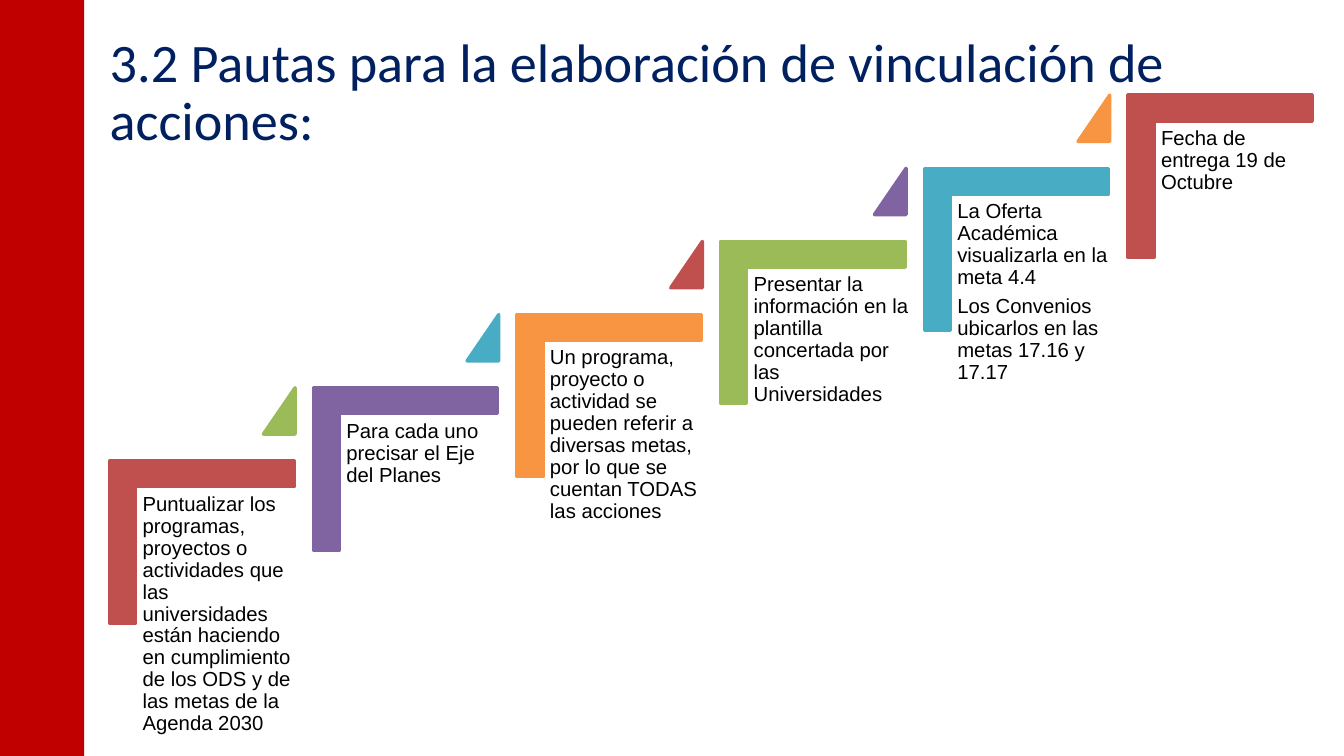
"""Build a slide with six ascending steps for linking actions."""
from dataclasses import dataclass

from pptx import Presentation
from pptx.dml.color import RGBColor
from pptx.enum.shapes import MSO_SHAPE as Shape
from pptx.enum.text import MSO_ANCHOR as Anchor
from pptx.util import Inches, Pt

TITLE = "3.2 Pautas para la elaboración de vinculación de acciones:"
STEPS = [
    ["Puntualizar los programas, proyectos o actividades que las universidades están "
     "haciendo en cumplimiento de los ODS y de las metas de la Agenda 2030"],
    ["Para cada uno precisar el Eje del Planes"],
    ["Un programa, proyecto o actividad se pueden referir a diversas metas, "
     "por lo que se cuentan TODAS las acciones"],
    ["Presentar la información en la plantilla concertada por las Universidades"],
    ["La Oferta Académica visualizarla en la meta 4.4",
     "Los Convenios ubicarlos en las metas 17.16 y 17.17"],
    ["Fecha de entrega 19 de Octubre"],
]


@dataclass(frozen=True)
class Theme:
    title_font: str = "Calibri"
    body_font: str = "Arial"
    title_size: float = 32
    body_size: float = 12
    title_color: str = "002060"
    body_color: str = "000000"
    bar: str = "C00000"
    cycle: tuple = ("BF504D", "9BBB59", "8064A2", "49ACC5", "F79543")


THEME = Theme()
WIDTH, HEIGHT = 11.02, 6.2
BAR_WIDTH = 0.69
FIRST_LEFT, FIRST_TOP = 0.99, 3.69
RUN, RISE = 1.67, 0.6
CORNER_SIZE = (1.33, 1.51)
CORNER_ARM = 0.16
TEXT_OFFSET, TEXT_SIZE, TEXT_INSET = (0.13, 0.31), (1.37, 1.75), 0.05
TRIANGLE_OFFSET, TRIANGLE_SIZE = (1.17, -0.51), (0.26, 0.38)


def add_block(slide, kind, position, size, color, adjustments=(), line_width=0):
    shape = slide.shapes.add_shape(kind, *map(Inches, (*position, *size)))
    shape.shadow.inherit = False
    shape.fill.solid()
    shape.fill.fore_color.rgb = RGBColor.from_string(color)
    if line_width:
        shape.line.color.rgb = RGBColor.from_string(color)
        shape.line.width = Pt(line_width)
    else:
        shape.line.fill.background()
    for index, value in enumerate(adjustments):
        shape.adjustments[index] = value
    return shape


def add_text(slide, position, size, paragraphs, font, points, color, inset=0, anchor=Anchor.TOP):
    frame = slide.shapes.add_textbox(*map(Inches, (*position, *size))).text_frame
    frame.word_wrap = True
    frame.vertical_anchor = anchor
    frame.margin_left = frame.margin_right = Inches(inset)
    frame.margin_top = frame.margin_bottom = Inches(inset)
    frame.text = "\n".join(paragraphs)
    for index, paragraph in enumerate(frame.paragraphs):
        paragraph.line_spacing = 0.9
        paragraph.space_before = Pt(4.2 if index else 0)
        paragraph.font.name = font
        paragraph.font.size = Pt(points)
        paragraph.font.color.rgb = RGBColor.from_string(color)


def cycle_color(index):
    return THEME.cycle[index % len(THEME.cycle)]


def add_step(slide, index, paragraphs):
    left, top = FIRST_LEFT + index * RUN, FIRST_TOP - index * RISE

    def shifted(offset):
        return left + offset[0], top + offset[1]

    corner = add_block(slide, Shape.CORNER, (left, top), CORNER_SIZE,
                       cycle_color(2 * index), (CORNER_ARM, CORNER_ARM), 2)
    corner.rotation = 90
    add_text(slide, shifted(TEXT_OFFSET), TEXT_SIZE, paragraphs,
             THEME.body_font, THEME.body_size, THEME.body_color, TEXT_INSET)
    if index < len(STEPS) - 1:
        add_block(slide, Shape.ISOSCELES_TRIANGLE, shifted(TRIANGLE_OFFSET), TRIANGLE_SIZE,
                  cycle_color(2 * index + 1), (1,), 2)


def main():
    presentation = Presentation()
    presentation.slide_width, presentation.slide_height = Inches(WIDTH), Inches(HEIGHT)
    slide = presentation.slides.add_slide(presentation.slide_layouts[6])
    add_text(slide, (0.9, 0.25), (9.57, 1.04), [TITLE],
             THEME.title_font, THEME.title_size, THEME.title_color, anchor=Anchor.MIDDLE)
    add_block(slide, Shape.RECTANGLE, (0, 0), (BAR_WIDTH, HEIGHT), THEME.bar)
    for index, paragraphs in enumerate(STEPS):
        add_step(slide, index, paragraphs)
    presentation.save("out.pptx")


if __name__ == "__main__":
    main()
